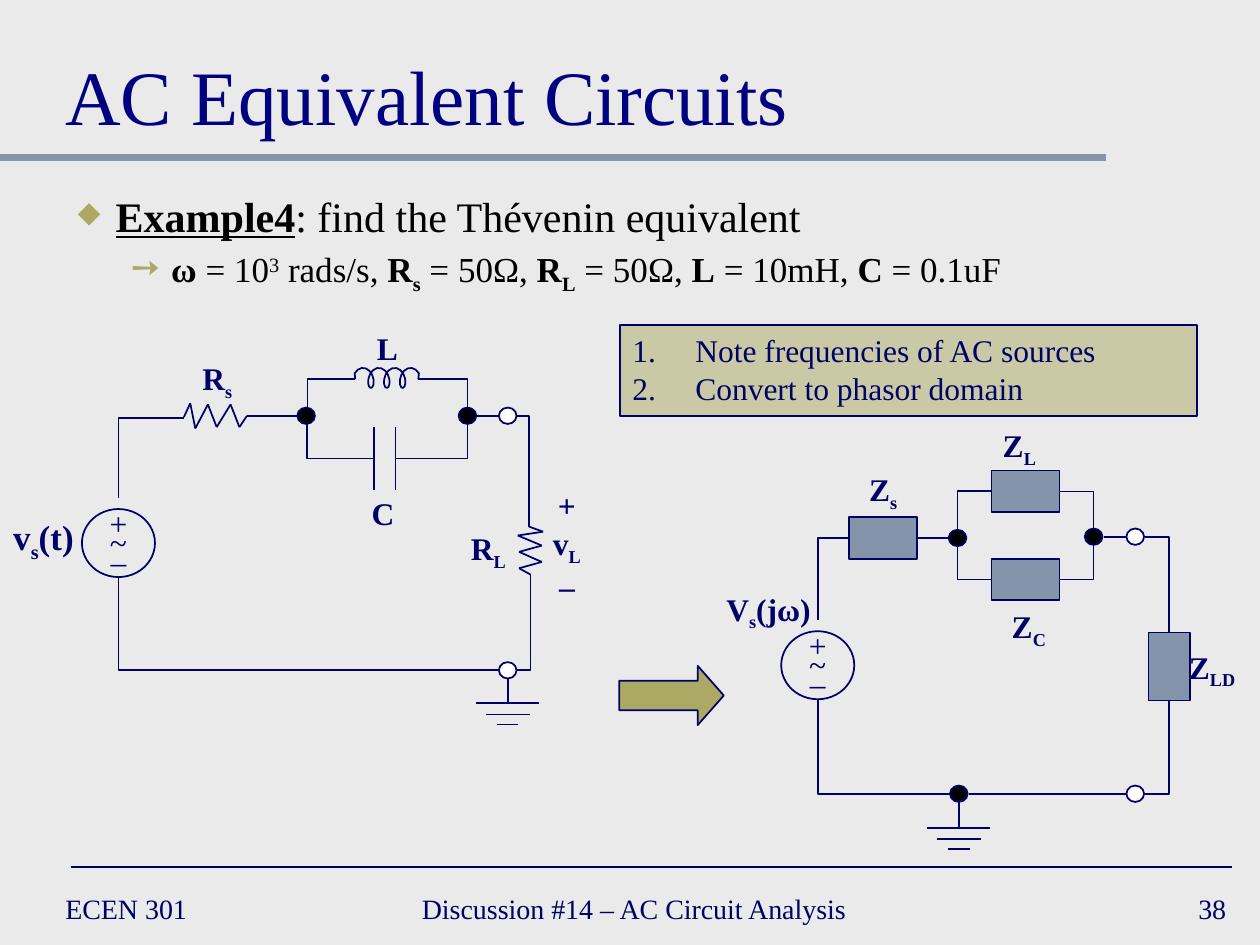
import itertools
import math
from dataclasses import dataclass

import pptx
import pptx.dml.color
import pptx.enum.shapes
import pptx.enum.text
import pptx.oxml
import pptx.oxml.ns
import pptx.util
from pptx.util import Inches

SHAPE = pptx.enum.shapes.MSO_SHAPE
CONNECTOR = pptx.enum.shapes.MSO_CONNECTOR
ALIGN = pptx.enum.text.PP_ALIGN
ANCHOR = pptx.enum.text.MSO_ANCHOR
qn = pptx.oxml.ns.qn


@dataclass(frozen=True)
class Theme:
    font: str = "Times New Roman"
    background: str = "EAEAEA"
    ink: str = "000066"
    title: str = "000080"
    black: str = "000000"
    white: str = "FFFFFF"
    slate: str = "8495A9"
    olive: str = "ACA964"
    title_size: int = 44
    body_size: int = 24
    detail_size: int = 20
    label_size: int = 18
    footer_size: int = 16


THEME = Theme()
BOLD = {"bold": True}
SUB = {"baseline": -25000}
BOLD_SUB = BOLD | SUB


def rgb(color):
    return pptx.dml.color.RGBColor.from_string(color)


def add_xml(parent, tag, children="", **attrs):
    """Append a DrawingML element with the given attributes and inner XML."""
    ns = pptx.oxml.ns.nsdecls("a")
    values = "".join(f' {key}="{value}"' for key, value in attrs.items())
    parent.append(pptx.oxml.parse_xml(f"<a:{tag} {ns}{values}>{children}</a:{tag}>"))


def write(p, runs, size, color=THEME.ink, bold=False, align=ALIGN.LEFT):
    """Fill a paragraph with runs, each a (text, style) pair."""
    p.alignment = align
    p.font.name, p.font.size, p.font.bold = THEME.font, pptx.util.Pt(size), bold
    p.font.color.rgb = rgb(color)
    for text, style in runs:
        r = p.add_run()
        r.text = text
        if "bold" in style:
            r.font.bold = style["bold"]
        if "underline" in style:
            r.font.underline = style["underline"]
        if "baseline" in style:
            r._r.get_or_add_rPr().set("baseline", str(style["baseline"]))


def indent(p, left, hanging):
    pPr = p._p.get_or_add_pPr()
    pPr.set("marL", str(Inches(left)))
    pPr.set("indent", str(-Inches(hanging)))
    return pPr


def add_text(s, left, top, width, height, wrap=True, anchor=ANCHOR.TOP):
    tf = s.shapes.add_textbox(*map(Inches, (left, top, width, height))).text_frame
    tf.word_wrap, tf.vertical_anchor = wrap, anchor
    return tf


def add_line_text(s, box, text, size, color=THEME.ink, align=ALIGN.LEFT, anchor=ANCHOR.MIDDLE):
    write(add_text(s, *box, anchor=anchor).paragraphs[0], [(text, {})], size, color, align=align)


def add_label(s, left, top, width, *lines, size=THEME.label_size, bold=True):
    """Centred label; each line is a list of runs."""
    tf = add_text(s, left, top, width, 0.1 + 0.3 * len(lines), wrap=False)
    for i, runs in enumerate(lines):
        p = tf.add_paragraph() if i else tf.paragraphs[0]
        write(p, runs, size, bold=bold, align=ALIGN.CENTER)


def symbol(name, sub="", tail=""):
    return [(t, style) for t, style in ((name, {}), (sub, SUB), (tail, {})) if t]


def outline(shape, color=THEME.ink, width=1):
    shape.line.color.rgb = rgb(color)
    shape.line.width = pptx.util.Pt(width)


def add_block(s, kind, cx, cy, width, height, fill=None):
    sp = s.shapes.add_shape(kind, *map(Inches, (cx - width / 2, cy - height / 2, width, height)))
    sp.shadow.inherit = False
    outline(sp)
    if fill:
        sp.fill.solid()
        sp.fill.fore_color.rgb = rgb(fill)
    else:
        sp.fill.background()
    return sp


def add_line(s, x1, y1, x2, y2, color=THEME.ink, width=1, kind=CONNECTOR.STRAIGHT):
    cxn = s.shapes.add_connector(kind, *map(Inches, (x1, y1, x2, y2)))
    outline(cxn, color, width)
    add_xml(cxn._element.spPr, "effectLst")
    return cxn


def add_wire(s, x1, y1, x2, y2):
    """Straight wire, or an elbow that leaves the first end horizontally."""
    if x1 == x2 or y1 == y2:
        add_line(s, x1, y1, x2, y2)
    else:
        cxn = add_line(s, x1, y1, x2, y2, kind=CONNECTOR.ELBOW)
        cxn._element.spPr.find(qn("a:prstGeom")).set("prst", "bentConnector2")


def add_resistor(s, points):
    for start, end in itertools.pairwise(points):
        add_line(s, *start, *end)


def add_coil(s, cx, cy):
    """Three-loop inductor drawn as a trochoid."""
    turns = [math.pi * 3.35 * i / 22 for i in range(-22, 23)]
    curve = [(cx + 0.02 * t - 0.05 * math.sin(t), cy + 0.08 * math.cos(t)) for t in turns]
    points = [(cx - 0.25, cy + 0.01), *curve, (cx + 0.25, cy + 0.01)]
    points = [(Inches(x), Inches(y)) for x, y in points]
    builder = s.shapes.build_freeform(*points[0])
    builder.add_line_segments(points[1:], close=False)
    sp = builder.convert_to_shape()
    sp.shadow.inherit = False
    sp.fill.background()
    outline(sp)


def add_node(s, cx, cy, fill=THEME.black):
    add_block(s, SHAPE.OVAL, cx, cy, 0.14, 0.13, fill)


def add_source(s, cx, cy):
    add_block(s, SHAPE.OVAL, cx, cy, 0.58, 0.54)
    add_label(s, cx - 0.17, cy - 0.36, 0.34, symbol("+"), symbol("–"), bold=False)
    add_label(s, cx - 0.17, cy - 0.21, 0.34, symbol("~"), bold=False)


def add_ground(s, cx, y):
    add_wire(s, cx, y - 0.25, cx, y)
    for drop, width in ((0, 0.5), (0.09, 0.35), (0.17, 0.17)):
        add_wire(s, cx - width / 2, y + drop, cx + width / 2, y + drop)


def add_impedance(s, cx, cy, width=0.54, height=0.33):
    add_block(s, SHAPE.RECTANGLE, cx, cy, width, height, THEME.slate)


def add_frame(s):
    add_line(s, 0, 1.25, 8.78, 1.25, THEME.slate, 4)
    add_line(s, 0.56, 6.88, 9.78, 6.88)
    size = THEME.footer_size
    add_line_text(s, (0.42, 7, 2.17, 0.42), "ECEN 301", size)
    add_line_text(s, (3.25, 7, 3.83, 0.42), "Discussion #14 – AC Circuit Analysis", size)
    add_line_text(s, (7.75, 7, 2.08, 0.42), "38", size, align=ALIGN.RIGHT)
    add_line_text(s, (0.42, 0.17, 9.17, 1), "AC Equivalent Circuits", THEME.title_size,
                  THEME.title, anchor=ANCHOR.BOTTOM)


def add_problem(s):
    tf = add_text(s, 0.44, 1.46, 9.14, 1.12)
    example = [("Example4", BOLD | {"underline": True}), (": find the Thévenin equivalent", {})]
    givens = [("ω", BOLD), (" = 10", {}), ("3", {"baseline": 30000}), (" rads/s, ", {}),
              ("R", BOLD), ("s", BOLD_SUB), (" = 50Ω, ", {}),
              ("R", BOLD), ("L", BOLD_SUB), (" = 50Ω, ", {}),
              ("L", BOLD), (" = 10mH, ", {}), ("C ", BOLD), ("= 0.1uF", {})]
    rows = ((example, THEME.body_size, "◆", 70, 0.38, 0.3, 0),
            (givens, THEME.detail_size, "➙", 100, 0.82, 0.32, 4))
    for i, (runs, size, bullet, percent, left, hanging, before) in enumerate(rows):
        p = tf.add_paragraph() if i else tf.paragraphs[0]
        p.space_before = pptx.util.Pt(before)
        pPr = indent(p, left, hanging)
        add_xml(pPr, "buClr", f'<a:srgbClr val="{THEME.olive}"/>')
        add_xml(pPr, "buSzPct", val=percent * 1000)
        add_xml(pPr, "buChar", char=bullet)
        write(p, runs, size, THEME.black)


def add_steps(s):
    sp = add_block(s, SHAPE.RECTANGLE, 7.21, 2.94, 4.58, 0.72, THEME.olive)
    add_xml(sp._element.spPr.find(qn("a:solidFill"))[0], "alpha", val=50000)
    tf = sp.text_frame
    tf.word_wrap, tf.vertical_anchor = True, ANCHOR.TOP
    for i, step in enumerate(("Note frequencies of AC sources", "Convert to phasor domain")):
        p = tf.add_paragraph() if i else tf.paragraphs[0]
        add_xml(indent(p, 0.5, 0.5), "buAutoNum", type="arabicPeriod")
        write(p, [(step, {})], THEME.label_size)


def add_time_circuit(s):
    for wire in ((1.46, 3.32, 0.94, 3.95), (1.96, 3.3, 2.36, 3.3), (2.82, 3.01, 2.44, 3.23),
                 (3.32, 3.01, 3.71, 3.23), (2.97, 3.64, 2.44, 3.36), (3.14, 3.64, 3.71, 3.36),
                 (3.78, 3.3, 3.96, 3.3), (4.1, 3.3, 4.2, 4.18), (4.1, 5.32, 4.21, 4.56),
                 (3.96, 5.32, 0.94, 4.58), (2.97, 3.39, 2.97, 3.89), (3.14, 3.39, 3.14, 3.89)):
        add_wire(s, *wire)
    add_resistor(s, [(1.46, 3.31), (1.51, 3.2), (1.55, 3.4), (1.65, 3.21),
                     (1.72, 3.39), (1.83, 3.21), (1.9, 3.39), (1.96, 3.3)])
    add_resistor(s, [(4.2, 4.18), (4.31, 4.22), (4.11, 4.25), (4.3, 4.33),
                     (4.12, 4.38), (4.3, 4.46), (4.12, 4.51), (4.21, 4.56)])
    add_coil(s, 3.07, 3)
    add_source(s, 0.94, 4.31)
    add_ground(s, 4.03, 5.58)
    for cx, cy, fill in ((2.43, 3.3, THEME.black), (3.71, 3.3, THEME.black),
                         (4.03, 3.3, THEME.white), (4.03, 5.32, THEME.white)):
        add_node(s, cx, cy, fill)
    add_label(s, 0, 4.04, 0.69, symbol("v", "s", "(t)"), size=THEME.detail_size)
    for left, top, width, text in (
            (1.49, 2.8, 0.47, symbol("R", "s")), (2.89, 2.56, 0.37, symbol("L")),
            (2.85, 3.87, 0.38, symbol("C")), (3.63, 4.15, 0.49, symbol("R", "L"))):
        add_label(s, left, top, width, text)
    add_label(s, 4.28, 3.81, 0.44, symbol("+"), symbol("v", "L"), symbol("–"))


def add_phasor_circuit(s):
    for wire in ((6.74, 4.27, 6.49, 4.92), (7.28, 4.27, 7.53, 4.27), (7.88, 3.9, 7.6, 4.2),
                 (7.88, 4.6, 7.6, 4.34), (8.41, 3.9, 8.68, 4.19), (8.41, 4.6, 8.68, 4.32),
                 (8.76, 4.26, 8.94, 4.26), (9.09, 4.26, 9.28, 5.03), (9.09, 6.3, 9.28, 5.56),
                 (7.69, 6.3, 8.94, 6.3), (7.54, 6.3, 6.49, 5.55)):
        add_wire(s, *wire)
    for cx, cy in ((7.01, 4.27), (8.14, 3.9), (8.14, 4.6)):
        add_impedance(s, cx, cy)
    add_impedance(s, 9.28, 5.29, 0.33, 0.54)
    add_source(s, 6.49, 5.28)
    add_ground(s, 7.61, 6.57)
    for cx, cy, fill in ((7.6, 4.27, THEME.black), (8.68, 4.26, THEME.black),
                         (7.61, 6.3, THEME.black), (9.01, 4.26, THEME.white),
                         (9.01, 6.3, THEME.white)):
        add_node(s, cx, cy, fill)
    for left, top, width, text in (
            (6.78, 3.68, 0.46, symbol("Z", "s")), (7.85, 3.33, 0.48, symbol("Z", "L")),
            (7.92, 4.77, 0.49, symbol("Z", "C")), (9.32, 5.09, 0.6, symbol("Z", "LD")),
            (5.66, 4.63, 0.88, symbol("V", "s", "(jω)"))):
        add_label(s, left, top, width, text)


def main():
    prs = pptx.Presentation()
    prs.slide_width, prs.slide_height = Inches(10), Inches(7.5)
    s = prs.slides.add_slide(prs.slide_layouts[6])
    s.background.fill.solid()
    s.background.fill.fore_color.rgb = rgb(THEME.background)
    add_frame(s)
    add_problem(s)
    add_time_circuit(s)
    add_steps(s)
    arrow = add_block(s, SHAPE.RIGHT_ARROW, 5.33, 5.52, 0.83, 0.47, THEME.olive)
    arrow.adjustments[1] = 0.44
    add_phasor_circuit(s)
    prs.save("out.pptx")


if __name__ == "__main__":
    main()
